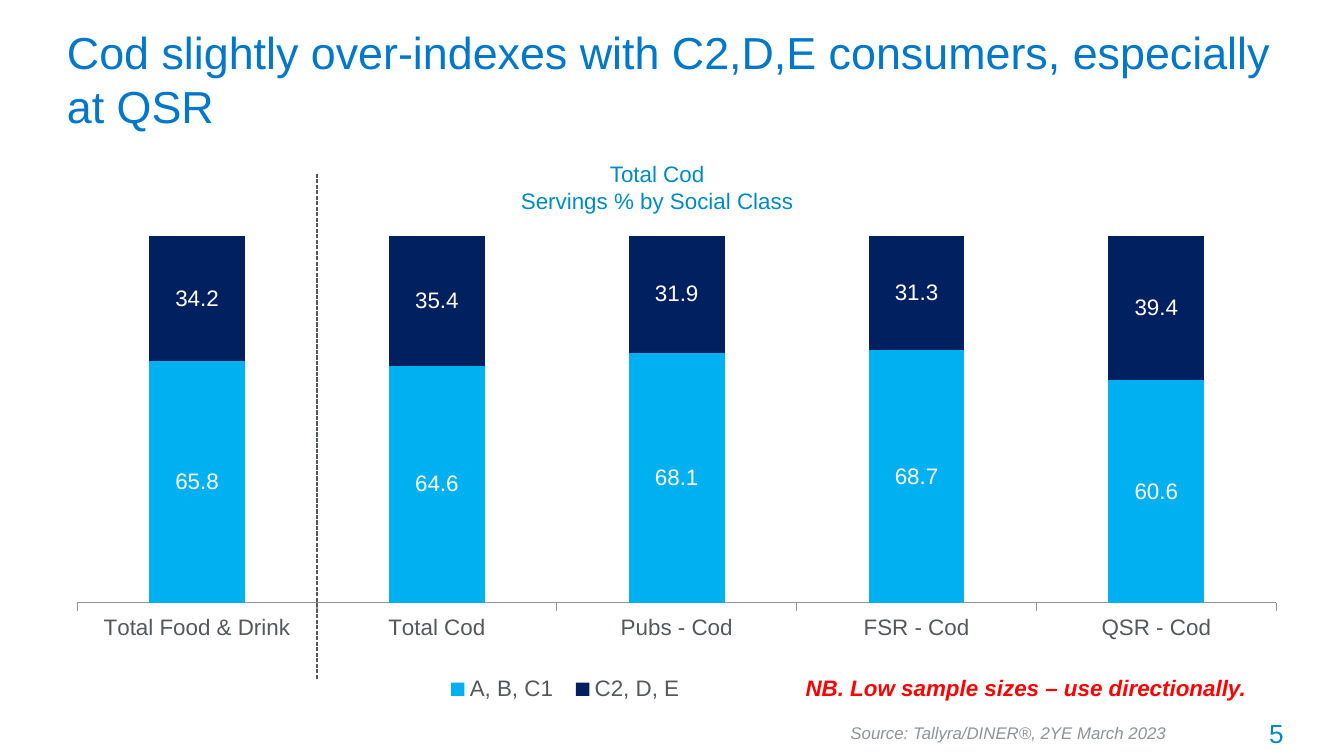
from lxml import etree
from pptx import Presentation
from pptx.chart.data import CategoryChartData
from pptx.dml.color import RGBColor
from pptx.enum.chart import XL_CHART_TYPE, XL_LABEL_POSITION, XL_LEGEND_POSITION, XL_TICK_MARK
from pptx.enum.dml import MSO_LINE
from pptx.enum.shapes import MSO_CONNECTOR
from pptx.enum.text import MSO_ANCHOR, MSO_AUTO_SIZE, PP_ALIGN
from pptx.oxml.ns import qn
from pptx.util import Inches, Pt

OUTLETS = ["Total Food & Drink", "Total Cod", "Pubs - Cod", "FSR - Cod", "QSR - Cod"]
SHARES = [
    ("A, B, C1", "00B0F0", [65.8, 64.6, 68.1, 68.7, 60.6]),
    ("C2, D, E", "002060", [34.2, 35.4, 31.9, 31.3, 39.4]),
]


def rgb(value):
    return RGBColor.from_string(value)


def apply(target, formats):
    for name, value in formats.items():
        setattr(target, name, value)


def place(parent, index, box, inner=False):
    """Give a chart part a manual layout, as fractions of the chart."""
    for old in parent.findall(qn("c:layout")):
        parent.remove(old)
    layout = etree.Element(qn("c:layout"))
    manual = etree.SubElement(layout, qn("c:manualLayout"))
    settings = [("layoutTarget", "inner")] if inner else []
    settings += [("xMode", "edge"), ("yMode", "edge"), *zip("xywh", box)]
    for tag, value in settings:
        etree.SubElement(manual, qn(f"c:{tag}")).set("val", str(value))
    parent.insert(index, layout)


class Deck:
    font = "Arial"
    grey = "54585A"
    pale_grey = "8E9396"
    teal = "008AC0"

    def __init__(self, width):
        """Start a 16:9 deck of the given width in inches."""
        self.prs = Presentation()
        apply(self.prs, {"slide_width": Inches(width), "slide_height": Inches(width * 9 / 16)})

    def add_slide(self, layout):
        self.slide = self.prs.slides.add_slide(self.prs.slide_layouts[layout])

    def style(self, font, size, color, **formats):
        apply(font, {"name": self.font, "size": Pt(size), **formats})
        font.color.rgb = rgb(color)

    def text(self, box, lines, size, color, align=PP_ALIGN.LEFT, anchor=MSO_ANCHOR.TOP,
             wrap=True, fit=MSO_AUTO_SIZE.SHAPE_TO_FIT_TEXT, **formats):
        frame = self.slide.shapes.add_textbox(*map(Inches, box)).text_frame
        apply(frame, {"word_wrap": wrap, "auto_size": fit,
                      "vertical_anchor": anchor, "text": "\n".join(lines)})
        for paragraph in frame.paragraphs:
            paragraph.alignment = align
            self.style(paragraph.runs[0].font, size, color, **formats)

    def dashed_line(self, start, end):
        divider = self.slide.shapes.add_connector(
            MSO_CONNECTOR.STRAIGHT, *map(Inches, start + end))
        apply(divider.line, {"width": Pt(0.75), "dash_style": MSO_LINE.SQUARE_DOT})
        divider.line.color.rgb = rgb(self.grey)
        etree.SubElement(divider._element.spPr, qn("a:effectLst"))

    def stacked_chart(self, box, categories, series, plot_box, legend_box):
        data = CategoryChartData(number_format="0.0")
        data.categories = categories
        for name, _, values in series:
            data.add_series(name, values)
        chart = self.slide.shapes.add_chart(
            XL_CHART_TYPE.COLUMN_STACKED_100, *map(Inches, box), data).chart
        apply(chart, {"has_title": False, "has_legend": True})
        self.style(chart.font, 12, self.grey)
        apply(chart.legend, {"position": XL_LEGEND_POSITION.BOTTOM, "include_in_layout": False})
        apply(chart.value_axis, {"visible": False, "has_major_gridlines": False})
        apply(chart.category_axis, {"major_tick_mark": XL_TICK_MARK.OUTSIDE,
                                    "minor_tick_mark": XL_TICK_MARK.NONE})
        chart.category_axis.format.line.color.rgb = rgb(self.pale_grey)

        plot = chart.plots[0]
        apply(plot, {"gap_width": 150, "overlap": 100, "vary_by_categories": False})
        for bars, (_, color, _) in zip(plot.series, series):
            bars.format.fill.solid()
            bars.format.fill.fore_color.rgb = rgb(color)
            labels = bars.data_labels
            apply(labels, {"show_value": True, "number_format": "#,##0.0",
                           "number_format_is_linked": False,
                           "position": XL_LABEL_POSITION.CENTER})
            self.style(labels.font, 12, "FFFFFF")

        root = chart._chartSpace
        place(root.find(".//" + qn("c:plotArea")), 0, plot_box, inner=True)
        place(root.find(".//" + qn("c:legend")), 1, legend_box)


def main():
    deck = Deck(10)
    deck.add_slide(6)
    deck.stacked_chart((0.4, 1.75, 9.17, 3.52), OUTLETS, SHARES,
                       plot_box=(0.019, 0.001, 0.973, 0.776),
                       legend_box=(0.31, 0.92, 0.21, 0.08))
    deck.text((3.77, 1.14, 2.24, 0.5), ["Total Cod", "Servings % by Social Class"],
              12, deck.teal, PP_ALIGN.CENTER, wrap=False)
    deck.dashed_line((2.36, 5.05), (2.36, 1.29))
    deck.text((8.85, 5.29, 0.8, 0.34), ["5"], 14, deck.teal, PP_ALIGN.RIGHT)
    deck.text((0.4, 0.23, 9.17, 0.71),
              ["Cod slightly over-indexes with C2,D,E consumers, especially at QSR"],
              24, "0077C8", anchor=MSO_ANCHOR.MIDDLE, fit=MSO_AUTO_SIZE.NONE)
    deck.text((5.7, 4.97, 3.87, 0.3), ["NB. Low sample sizes – use directionally."],
              12, "FF0000", PP_ALIGN.CENTER, bold=True, italic=True)
    deck.text((6.23, 5.33, 2.67, 0.25), ["Source: Tallyra/DINER®, 2YE March 2023"],
              9, deck.pale_grey, wrap=False, italic=True)
    deck.prs.save("out.pptx")


if __name__ == "__main__":
    main()
